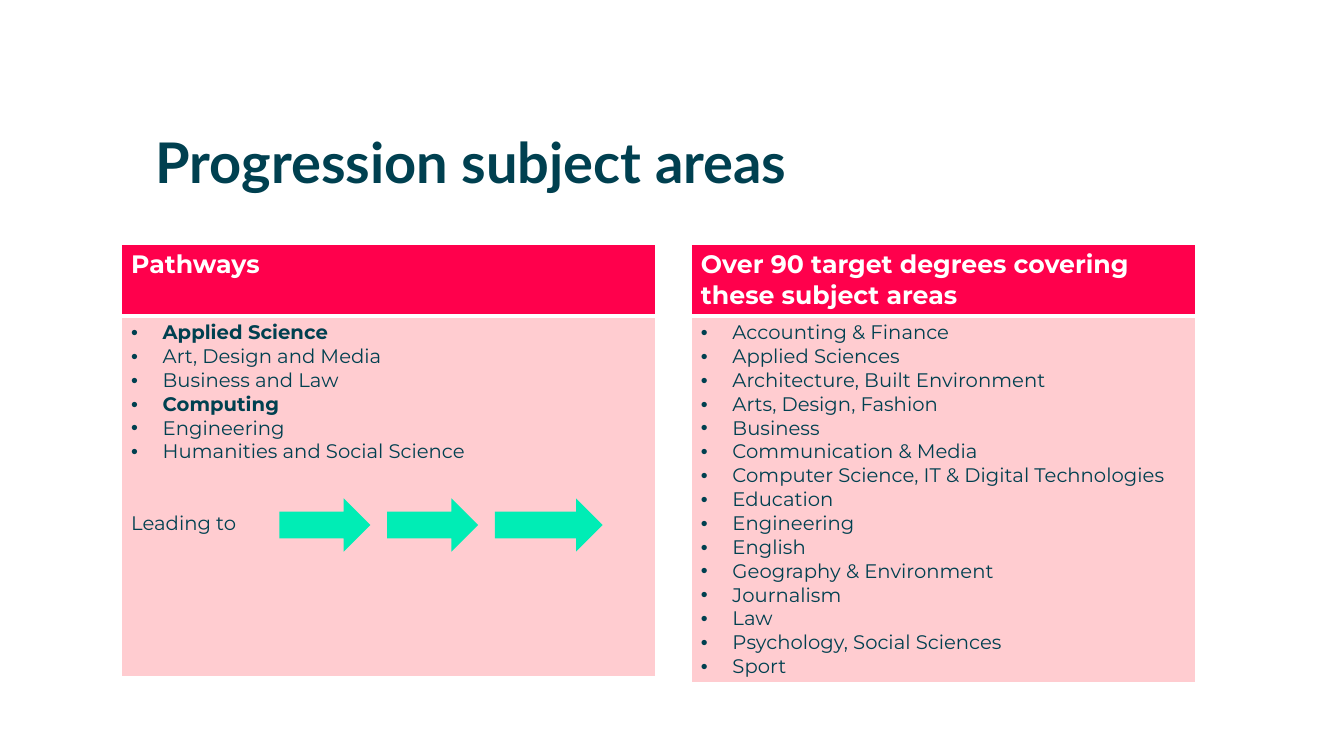
from lxml.etree import SubElement
from pptx import Presentation
from pptx.dml.color import RGBColor
from pptx.enum.shapes import MSO_SHAPE
from pptx.enum.text import MSO_ANCHOR
from pptx.oxml.ns import qn
from pptx.util import Pt

TEAL = RGBColor(0x00, 0x40, 0x50)
RED = RGBColor(0xFF, 0x00, 0x4C)
PINK = RGBColor(0xFF, 0xCC, 0xD0)
MINT = RGBColor(0x00, 0xED, 0xB5)
WHITE = RGBColor(0xFF, 0xFF, 0xFF)

PATHS = ["Applied Science", "Art, Design and Media", "Business and Law",
         "Computing", "Engineering", "Humanities and Social Science"]
STRONG = {"Applied Science", "Computing"}
AREAS = ["Accounting & Finance", "Applied Sciences",
         "Architecture, Built Environment", "Arts, Design, Fashion",
         "Business", "Communication & Media",
         "Computer Science, IT & Digital Technologies", "Education",
         "Engineering", "English", "Geography & Environment", "Journalism",
         "Law", "Psychology, Social Sciences", "Sport"]


def style(para, size, color, bold, face="Montserrat"):
    """Format every run of a paragraph."""
    for run in para.runs:
        font = run.font
        font.name, font.size, font.bold = face, Pt(size), bold
        font.color.rgb = color


def bullet(para):
    """Give a paragraph a hanging bullet."""
    props = para._p.get_or_add_pPr()
    props.set("marL", str(Pt(22.5)))
    props.set("indent", str(-Pt(22.5)))
    SubElement(props, qn("a:buFont"), typeface="Arial")
    SubElement(props, qn("a:buChar"), char="•")


def paint(cell, color, base):
    """Set white borders and a solid fill on a cell."""
    props = cell._tc.get_or_add_tcPr()
    for side, width in (("L", 1), ("R", 1), ("T", 1), ("B", base)):
        line = SubElement(props, qn("a:ln" + side), w=str(Pt(width)))
        fill = SubElement(line, qn("a:solidFill"))
        SubElement(fill, qn("a:srgbClr"), val=str(WHITE))
    cell.fill.solid()
    cell.fill.fore_color.rgb = color


def add_title(slide, text):
    """Add the slide title."""
    box = slide.shapes.add_textbox(Pt(111), Pt(98), Pt(747), Pt(41))
    frame = box.text_frame
    frame.word_wrap = True
    frame.vertical_anchor = MSO_ANCHOR.MIDDLE
    frame.margin_left = frame.margin_right = 0
    frame.margin_top = frame.margin_bottom = 0
    frame.text = text
    para = frame.paragraphs[0]
    para.line_spacing = 0.9
    style(para, 40, TEAL, True, "Lato")


def add_panel(slide, left, width, depth, head, items):
    """Add a headed list as a table and return its body frame."""
    table = slide.shapes.add_table(2, 1, Pt(left), Pt(174.5), Pt(width),
                                   Pt(51 + depth)).table
    table.rows[0].height, table.rows[1].height = Pt(51), Pt(depth)
    top, body = table.cell(0, 0), table.cell(1, 0)
    paint(top, RED, 3)
    paint(body, PINK, 1)
    top.text_frame.text = head
    style(top.text_frame.paragraphs[0], 18, WHITE, True)
    body.text_frame.text = "\n".join(items)
    for para in body.text_frame.paragraphs:
        bullet(para)
        style(para, 14, TEAL, para.text in STRONG)
    return body.text_frame


def add_note(frame, text):
    """Add a plain line two lines below the list."""
    para = frame.add_paragraph()
    para.text = text
    para.space_before = Pt(34)
    style(para, 14, TEAL, False)


def add_arrow(slide, left, width):
    """Add a right arrow."""
    arrow = slide.shapes.add_shape(MSO_SHAPE.RIGHT_ARROW, Pt(left), Pt(356),
                                   Pt(width), Pt(38))
    arrow.shadow.inherit = False
    arrow.fill.solid()
    arrow.fill.fore_color.rgb = MINT
    arrow.line.fill.background()


def main():
    """Build and save the slide."""
    deck = Presentation()
    deck.slide_width, deck.slide_height = Pt(960), Pt(540)
    slide = deck.slides.add_slide(deck.slide_layouts[6])
    add_title(slide, "Progression subject areas")
    add_panel(slide, 493.5, 360.5, 262,
              "Over 90 target degrees covering these subject areas", AREAS)
    frame = add_panel(slide, 86.5, 382, 258, "Pathways", PATHS)
    add_note(frame, "Leading to")
    for step, width in enumerate((65, 65, 77)):
        add_arrow(slide, 199.5 + 77 * step, width)
    deck.save("out.pptx")


if __name__ == "__main__":
    main()
